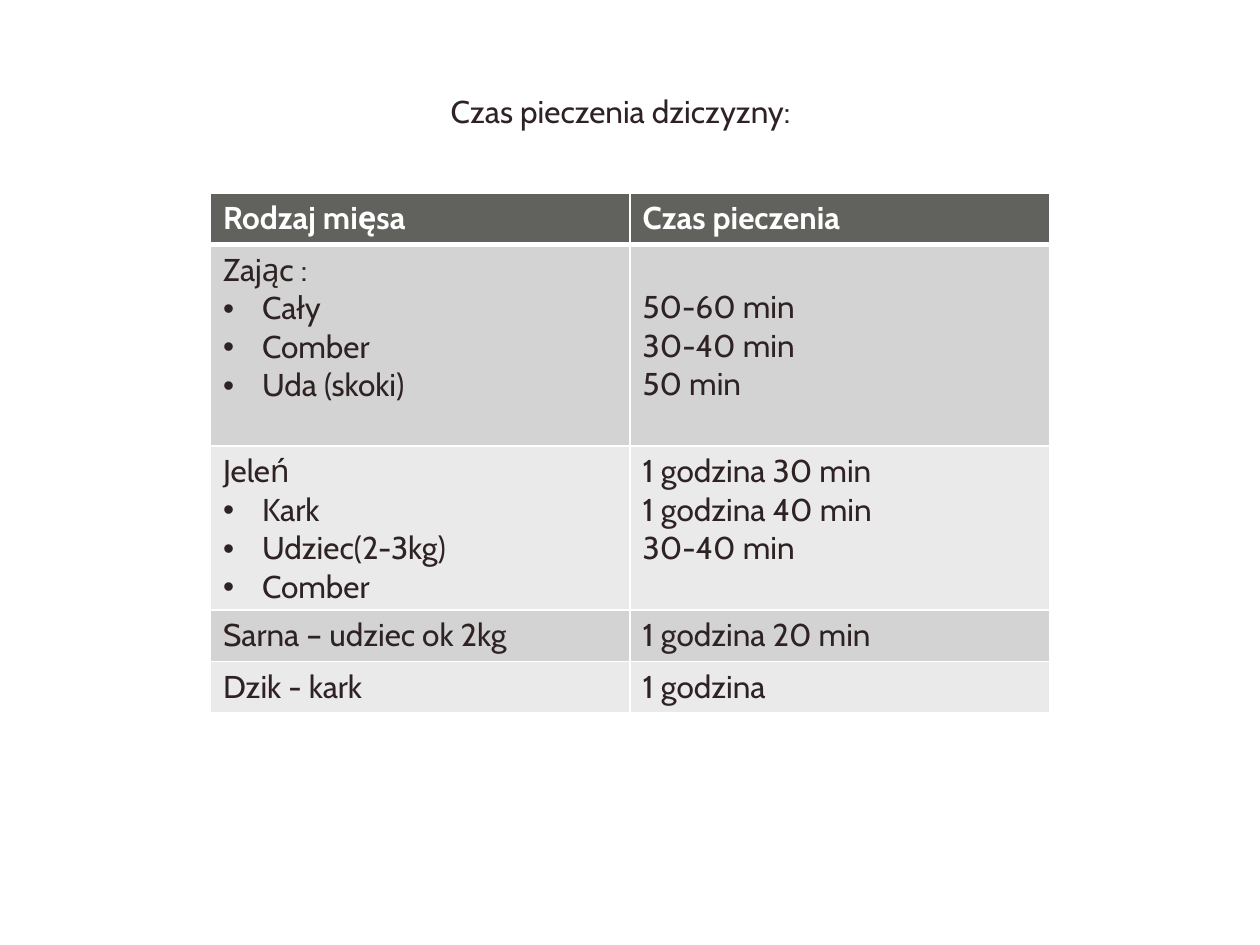
from pptx import Presentation
from pptx.dml.color import RGBColor
from pptx.enum.text import PP_ALIGN
from pptx.oxml.ns import qn
from pptx.util import Inches, Pt
from lxml.etree import SubElement

TITLE = "Czas pieczenia dziczyzny:"
HEADER = ("Rodzaj mięsa", "Czas pieczenia")
MEATS = [
    {"name": "Zając :", "cuts": ["Cały", "Comber", "Uda (skoki)"],
     "times": ["50-60 min", "30-40 min", "50 min"], "height": 1.6, "skip": 1},
    {"name": "Jeleń", "cuts": ["Kark", "Udziec(2-3kg)", "Comber"],
     "times": ["1 godzina 30 min", "1 godzina 40 min", "30-40 min"], "height": 1.3},
    {"name": "Sarna – udziec ok 2kg", "times": ["1 godzina 20 min"]},
    {"name": "Dzik - kark", "times": ["1 godzina"]},
]
DARK, WHITE, HEAD_FILL = "2E2224", "FFFFFF", "61625E"
BANDS = ("D2D3D2", "EAEAEA")
ROW_H, COL_W, LINE_H, MARGIN = 0.41, 3.33, 0.3, 0.05
INDENT = Inches(0.31)


def rgb(value):
    return RGBColor.from_string(value)


def add_text(p, text, color=DARK, bold=False):
    r = p.add_run()
    r.text = text
    for name, value in {"name": "Cabin", "size": Pt(18), "bold": bold}.items():
        setattr(r.font, name, value)
    r.font.color.rgb = rgb(color)


def add_bullet(p):
    pPr = p._p.get_or_add_pPr()
    pPr.set("marL", str(INDENT))
    pPr.set("indent", str(-INDENT))
    SubElement(pPr, qn("a:buFont"), typeface="Arial")
    SubElement(pPr, qn("a:buChar"), char="•")


def add_borders(cell, widths):
    tcPr = cell._tc.get_or_add_tcPr()
    for side, width in widths.items():
        ln = SubElement(tcPr, qn(f"a:ln{side}"), w=str(Pt(width)))
        SubElement(SubElement(ln, qn("a:solidFill")), qn("a:srgbClr"), val=WHITE)


def fill_cell(cell, lines, fill, top=1, bottom=1, bullets=False, skip=0, **style):
    add_borders(cell, {"L": 1, "R": 1, "T": top, "B": bottom})
    cell.fill.solid()
    cell.fill.fore_color.rgb = rgb(fill)
    cell.margin_top = Inches(MARGIN + skip * LINE_H)
    tf = cell.text_frame
    for i, line in enumerate(lines):
        p = tf.add_paragraph() if i else tf.paragraphs[0]
        if bullets and i:
            add_bullet(p)
        add_text(p, line, **style)


prs = Presentation()
prs.slide_width, prs.slide_height = Inches(10), Inches(7.5)
s = prs.slides.add_slide(prs.slide_layouts[6])

tf = s.shapes.add_textbox(Inches(1.38), Inches(0.68), Inches(7.09), Inches(0.71)).text_frame
tf.word_wrap = True
tf.paragraphs[0].alignment = PP_ALIGN.CENTER
add_text(tf.paragraphs[0], TITLE)

heights = [ROW_H] + [meat.get("height", ROW_H) for meat in MEATS]
table = s.shapes.add_table(len(heights), len(HEADER), Inches(1.67), Inches(1.53),
                           Inches(COL_W * len(HEADER)), Inches(sum(heights))).table
for row, height in zip(table.rows, heights):
    row.height = Inches(height)

for col, label in enumerate(HEADER):
    fill_cell(table.cell(0, col), [label], HEAD_FILL, bottom=3, color=WHITE, bold=True)

for i, meat in enumerate(MEATS):
    row, fill, top = i + 1, BANDS[i % 2], 1 if i else 3
    names = [meat["name"], *meat.get("cuts", [])]
    fill_cell(table.cell(row, 0), names, fill, top=top, bullets=True)
    fill_cell(table.cell(row, 1), meat["times"], fill, top=top, skip=meat.get("skip", 0))

prs.save("out.pptx")
